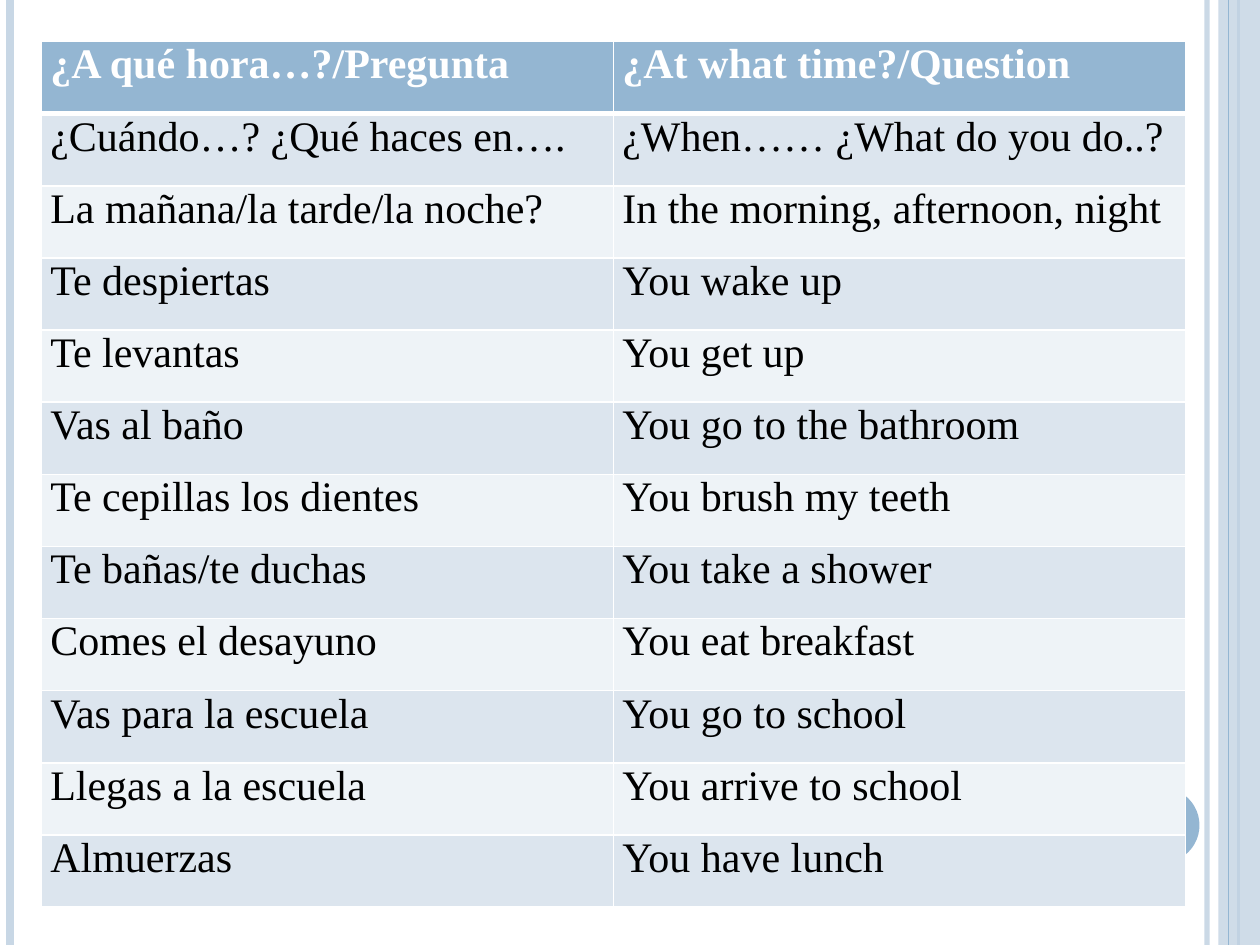
from dataclasses import dataclass

from lxml import etree
from pptx import Presentation
from pptx import util as u
from pptx.dml.color import RGBColor
from pptx.enum import shapes
from pptx.oxml import ns


@dataclass(frozen=True)
class Theme:
    font: str = "Times New Roman"
    text_size: float = 24
    accent: str = "94B6D2"
    pale_accent: str = "C8D7E5"
    white: str = "FFFFFF"
    black: str = "000000"
    bands: tuple[str, str] = ("DCE5EE", "EEF3F7")
    grid_line: float = 1
    header_line: float = 3


@dataclass(frozen=True)
class Stripe:
    x: float
    color: str
    weight: float
    opacity: int = 100


THEME = Theme()
WIDTH, HEIGHT = 10, 7.5
TABLE_LEFT = TABLE_TOP = 0.33
TABLE_WIDTH, TABLE_HEIGHT = 9.08, 6.87

STRIPES_BELOW_PANEL = [
    Stripe(9.58, THEME.pale_accent, 3, 93),
    Stripe(0.08, THEME.pale_accent, 4.5),
    Stripe(9.83, THEME.accent, 1.5),
]
STRIPE_ABOVE_PANEL = Stripe(9.75, THEME.accent, 0.75)

PHRASES = [
    ("¿A qué hora…?/Pregunta", "¿At what time?/Question"),
    ("¿Cuándo…? ¿Qué haces en….", "¿When…… ¿What do you do..?"),
    ("La mañana/la tarde/la noche?", "In the morning, afternoon, night"),
    ("Te despiertas", "You wake up"),
    ("Te levantas", "You get up"),
    ("Vas al baño", "You go to the bathroom"),
    ("Te cepillas los dientes", "You brush my teeth"),
    ("Te bañas/te duchas", "You take a shower"),
    ("Comes el desayuno", "You eat breakfast"),
    ("Vas para la escuela", "You go to school"),
    ("Llegas a la escuela", "You arrive to school"),
    ("Almuerzas", "You have lunch"),
]


def set_solid(fill, color: str, opacity: int = 100) -> None:
    fill.solid()
    fill.fore_color.rgb = RGBColor.from_string(color)
    if opacity < 100:
        color_element = fill._xPr.find(".//" + ns.qn("a:srgbClr"))
        etree.SubElement(color_element, ns.qn("a:alpha"), val=str(opacity * 1000))


def add_stripe(slide, stripe: Stripe) -> None:
    x = u.Inches(stripe.x)
    connector = slide.shapes.add_connector(
        shapes.MSO_CONNECTOR.STRAIGHT, x, 0, x, u.Inches(HEIGHT))
    connector.line.width = u.Pt(stripe.weight)
    set_solid(connector.line.fill, stripe.color, stripe.opacity)
    etree.SubElement(connector._element.spPr, ns.qn("a:effectLst"))


def add_filled_shape(slide, kind, left: float, top: float, width: float,
                     height: float, color: str, opacity: int = 100) -> None:
    shape = slide.shapes.add_shape(
        kind, *map(u.Inches, (left, top, width, height)))
    shape.shadow.inherit = False
    shape.line.fill.background()
    set_solid(shape.fill, color, opacity)


def add_border(cell, side: str, weight: float) -> None:
    properties = cell._tc.get_or_add_tcPr()
    line = etree.SubElement(properties, ns.qn(f"a:ln{side}"), w=str(u.Pt(weight)))
    fill = etree.SubElement(line, ns.qn("a:solidFill"))
    etree.SubElement(fill, ns.qn("a:srgbClr"), val=THEME.white)


def write_text(cell, text: str, *, color: str, bold: bool) -> None:
    cell.margin_left = cell.margin_right = u.Inches(0.07)
    cell.margin_top = cell.margin_bottom = 0
    run = cell.text_frame.paragraphs[0].add_run()
    run.text = text
    run.font.name = THEME.font
    run.font.size = u.Pt(THEME.text_size)
    run.font.bold = bold
    run.font.color.rgb = RGBColor.from_string(color)


def add_phrase_table(slide) -> None:
    frame = slide.shapes.add_table(
        len(PHRASES), len(PHRASES[0]),
        *map(u.Inches, (TABLE_LEFT, TABLE_TOP, TABLE_WIDTH, TABLE_HEIGHT)))
    table = frame.table
    for row_index, row in enumerate(PHRASES):
        is_header = row_index == 0
        for column_index, text in enumerate(row):
            cell = table.cell(row_index, column_index)
            # The heavy rule is shared by the header and the row below it
            for side in "LRTB":
                heavy = (row_index, side) in {(0, "B"), (1, "T")}
                add_border(cell, side, THEME.header_line if heavy else THEME.grid_line)
            set_solid(cell.fill, THEME.accent if is_header
                      else THEME.bands[(row_index - 1) % 2])
            write_text(cell, text, bold=is_header,
                       color=THEME.white if is_header else THEME.black)


def main() -> None:
    presentation = Presentation()
    presentation.slide_width = u.Inches(WIDTH)
    presentation.slide_height = u.Inches(HEIGHT)
    slide = presentation.slides.add_slide(presentation.slide_layouts[6])
    set_solid(slide.background.fill, THEME.white)

    # Edge decoration
    for stripe in STRIPES_BELOW_PANEL:
        add_stripe(slide, stripe)
    add_filled_shape(slide, shapes.MSO_SHAPE.RECTANGLE, 9.67, 0, WIDTH - 9.67,
                     HEIGHT, THEME.pale_accent, 87)
    add_stripe(slide, STRIPE_ABOVE_PANEL)
    add_filled_shape(slide, shapes.MSO_SHAPE.OVAL, 8.92, 6.25, 0.6, 0.6, THEME.accent)

    # Spanish and English phrases
    add_phrase_table(slide)
    presentation.save("out.pptx")


if __name__ == "__main__":
    main()
